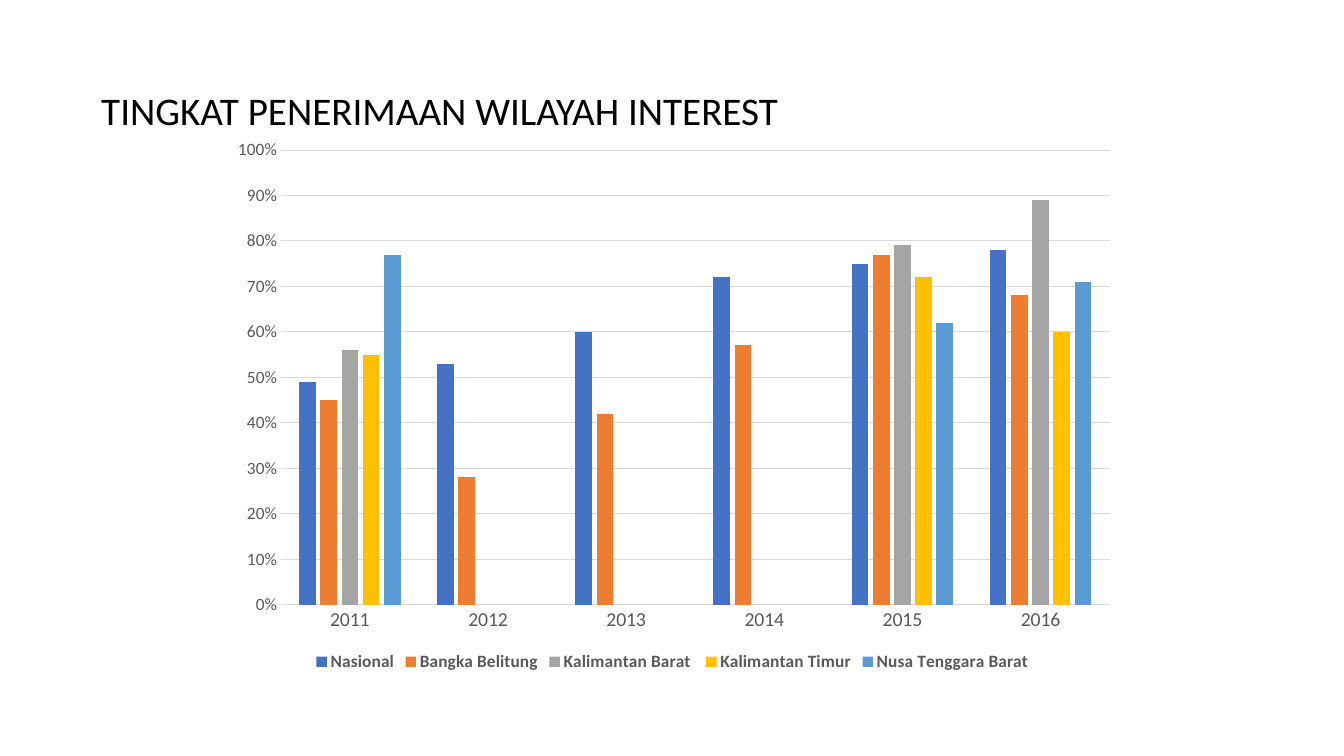
"""Build a slide with a clustered column chart of acceptance levels by region."""
from dataclasses import dataclass
from typing import Any, Optional

from lxml.etree import SubElement
from pptx import Presentation
from pptx.chart.chart import Chart
from pptx.chart.data import CategoryChartData as ChartData
from pptx.dml.color import RGBColor as Color
from pptx.enum.chart import XL_CHART_TYPE as ChartType
from pptx.enum.chart import XL_LEGEND_POSITION as LegendPosition
from pptx.enum.chart import XL_TICK_MARK as TickMark
from pptx.enum.text import MSO_ANCHOR as Anchor
from pptx.oxml.ns import qn
from pptx.slide import Slide
from pptx.util import Inches, Pt


@dataclass(frozen=True)
class Theme:
    font: str = "Calibri"
    title: str = "000000"
    label: str = "595959"
    rule: str = "D9D9D9"
    title_size: float = 31.7
    chart_size: float = 10
    category_size: float = 16
    label_size: float = 14
    rule_width: float = 0.75


@dataclass(frozen=True)
class Box:
    left: float
    top: float
    width: float
    height: float

    def lengths(self) -> tuple[Inches, ...]:
        return tuple(map(Inches, (self.left, self.top, self.width, self.height)))


@dataclass(frozen=True)
class Region:
    name: str
    color: str
    values: tuple[Optional[float], ...]


THEME = Theme()
TITLE_BOX = Box(1.04, 0.45, 13.03, 1.64)
CHART_BOX = Box(2.44, 1.44, 10.24, 6.16)
PLOT_SHARE = {"x": 0.07, "y": 0.04, "w": 0.91, "h": 0.83}
YEARS = [str(year) for year in range(2011, 2017)]
REGIONS = (
    Region("Nasional", "4472C4", (0.49, 0.53, 0.6, 0.72, 0.75, 0.78)),
    Region("Bangka Belitung", "ED7D31", (0.45, 0.28, 0.42, 0.57, 0.77, 0.68)),
    Region("Kalimantan Barat ", "A5A5A5", (0.56, None, None, None, 0.79, 0.89)),
    Region("Kalimantan Timur", "FFC000", (0.55, None, None, None, 0.72, 0.6)),
    Region("Nusa Tenggara Barat", "5B9BD5", (0.77, None, None, None, 0.62, 0.71)),
)


def apply(target: Any, formats: dict[str, Any]) -> None:
    for name, value in formats.items():
        setattr(target, name, value)


def style_font(font: Any, size: float, color: str, bold: bool = False) -> None:
    apply(font, {"name": THEME.font, "size": Pt(size), "bold": bold})
    font.color.rgb = Color.from_string(color)


def style_rule(line: Any) -> None:
    line.width = Pt(THEME.rule_width)
    line.color.rgb = Color.from_string(THEME.rule)


def add_title(page: Slide, text: str) -> None:
    frame = page.shapes.add_textbox(*TITLE_BOX.lengths()).text_frame
    apply(frame, {"word_wrap": True, "vertical_anchor": Anchor.MIDDLE})
    para = frame.paragraphs[0]
    para.line_spacing = 0.9
    span = para.add_run()
    span.text = text
    style_font(span.font, THEME.title_size, THEME.title)


def place_plot(chart: Chart) -> None:
    area = chart.element.find(".//" + qn("c:plotArea"))
    for old in area.findall(qn("c:layout")):
        area.remove(old)
    layout = SubElement(area, qn("c:layout"))
    area.insert(0, layout)
    manual = SubElement(layout, qn("c:manualLayout"))
    settings = {"layoutTarget": "inner", "xMode": "edge", "yMode": "edge", **PLOT_SHARE}
    for name, value in settings.items():
        SubElement(manual, qn(f"c:{name}")).set("val", str(value))


def style_axes(chart: Chart) -> None:
    years, levels = chart.category_axis, chart.value_axis
    ticks = {"major_tick_mark": TickMark.NONE, "minor_tick_mark": TickMark.NONE}
    apply(years, {**ticks, "has_major_gridlines": False})
    apply(levels, {**ticks, "has_major_gridlines": True, "minimum_scale": 0,
                   "maximum_scale": 1, "major_unit": 0.1})
    apply(levels.tick_labels, {"number_format": "0%", "number_format_is_linked": False})
    style_font(years.tick_labels.font, THEME.category_size, THEME.label)
    style_font(levels.tick_labels.font, THEME.label_size, THEME.label)
    style_rule(years.format.line)
    style_rule(levels.major_gridlines.format.line)
    levels.format.line.fill.background()


def add_region_chart(page: Slide) -> None:
    data = ChartData(number_format="0%")
    data.categories = YEARS
    for region in REGIONS:
        data.add_series(region.name, region.values)
    frame = page.shapes.add_chart(ChartType.COLUMN_CLUSTERED, *CHART_BOX.lengths(), data)
    chart = frame.chart
    apply(chart, {"has_title": False, "has_legend": True})
    style_font(chart.font, THEME.chart_size, THEME.title)
    apply(chart.legend, {"position": LegendPosition.BOTTOM, "include_in_layout": False})
    style_font(chart.legend.font, THEME.label_size, THEME.label, bold=True)
    plot = chart.plots[0]
    apply(plot, {"gap_width": 219, "overlap": -27, "vary_by_categories": False})
    for series, region in zip(plot.series, REGIONS):
        series.format.fill.solid()
        series.format.fill.fore_color.rgb = Color.from_string(region.color)
    style_axes(chart)
    place_plot(chart)


def main() -> None:
    deck = Presentation()
    apply(deck, {"slide_width": Inches(15.11), "slide_height": Inches(8.5)})
    page = deck.slides.add_slide(deck.slide_layouts[6])
    add_title(page, "TINGKAT PENERIMAAN WILAYAH INTEREST")
    add_region_chart(page)
    deck.save("out.pptx")


if __name__ == "__main__":
    main()
